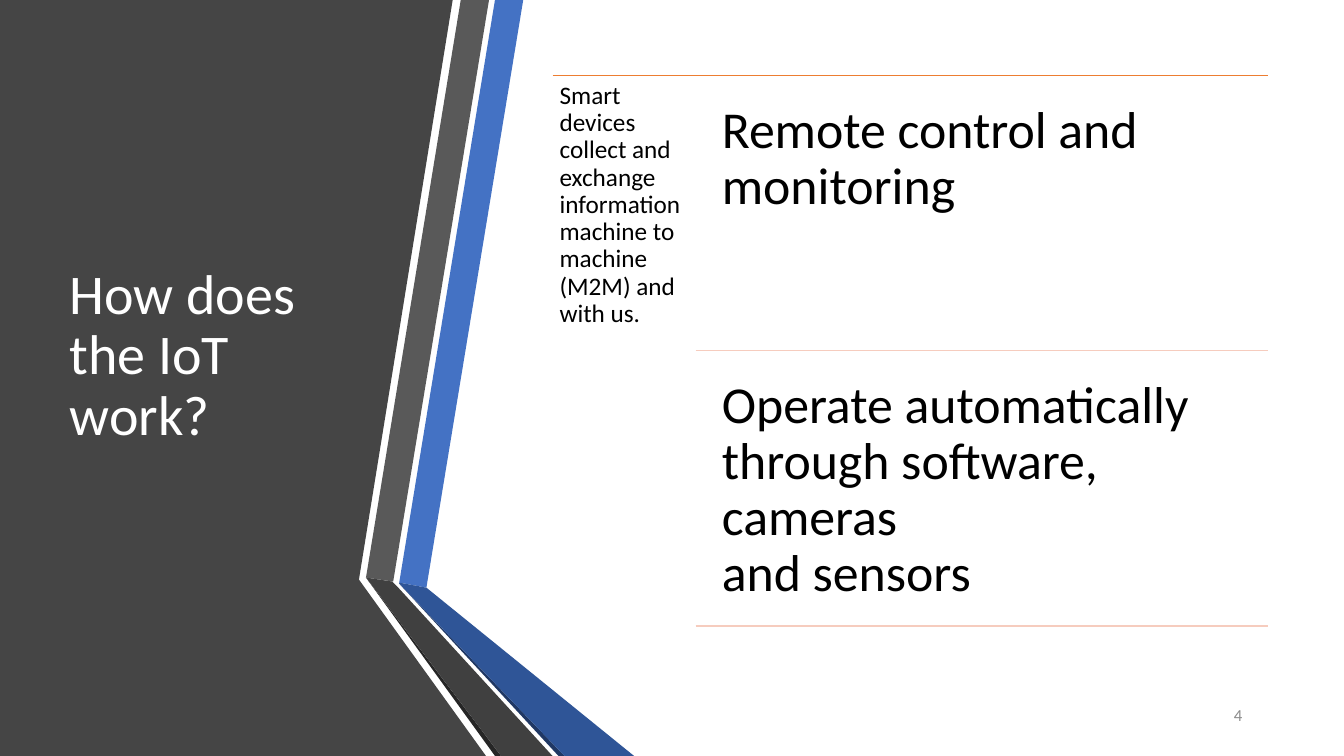
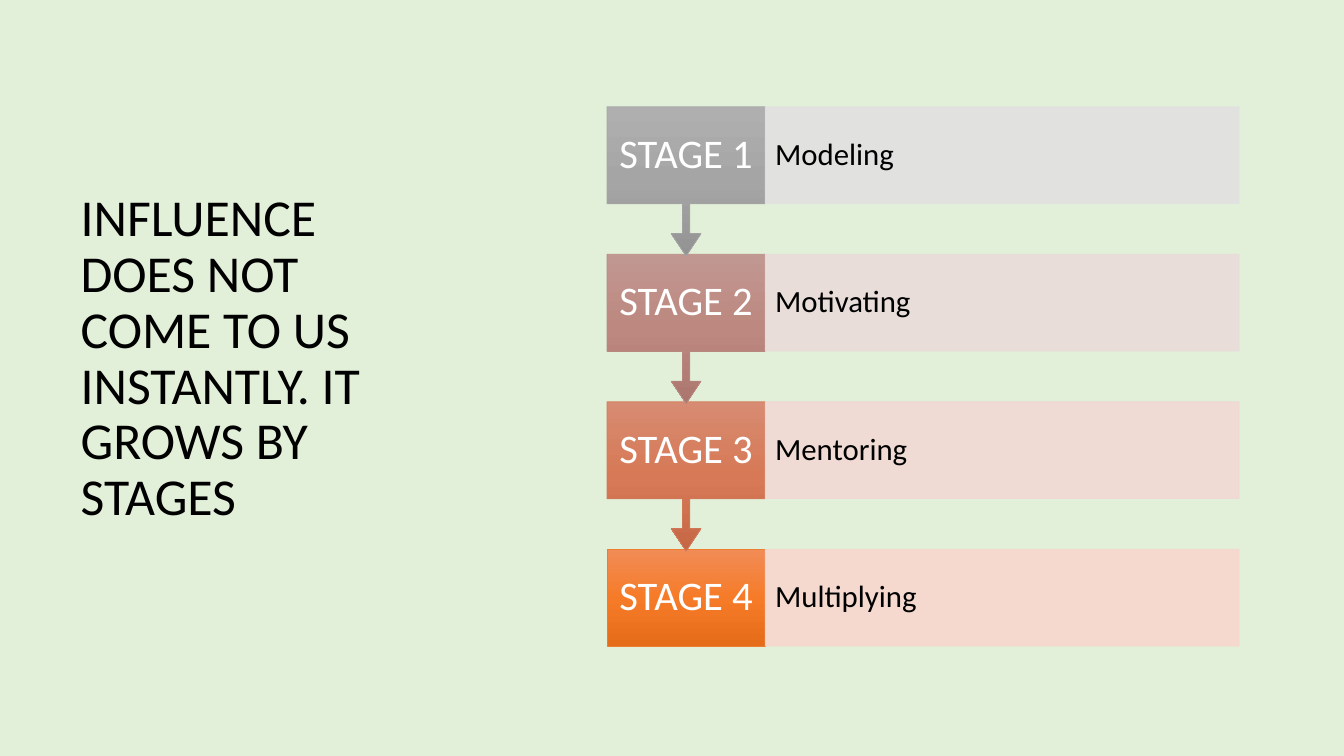
from lxml.etree import SubElement
from pptx import Presentation
from pptx.dml.color import RGBColor
from pptx.enum.shapes import MSO_CONNECTOR as Connector, MSO_SHAPE as Shape
from pptx.enum.text import MSO_ANCHOR as Anchor, MSO_AUTO_SIZE as AutoSize, PP_ALIGN as Align
from pptx.oxml.ns import qn
from pptx.util import Inches, Pt

WHITE = RGBColor(0xFF, 0xFF, 0xFF)
BLACK = RGBColor(0x00, 0x00, 0x00)
NUMBER_GRAY = RGBColor(0x8C, 0x8C, 0x8C)
PANEL_GRAY = RGBColor(0x45, 0x45, 0x45)
BAND_GRAY = RGBColor(0x59, 0x59, 0x59)
FOLD_GRAY = RGBColor(0x40, 0x40, 0x40)
EDGE_GRAY = RGBColor(0x26, 0x26, 0x26)
BAND_BLUE = RGBColor(0x44, 0x72, 0xC4)
FOLD_BLUE = RGBColor(0x2F, 0x55, 0x97)
EDGE_BLUE = RGBColor(0x20, 0x38, 0x64)
ORANGE = RGBColor(0xED, 0x7D, 0x31)
PALE_ORANGE = RGBColor(0xF6, 0xCC, 0xBE)
PALE_GREEN = RGBColor(0xE2, 0xF0, 0xD9)

RIBBON = [
    (PANEL_GRAY, [(0, 0), (4.49, 0), (3.56, 5.75), (4.82, 7.5), (0, 7.5)]),
    (BAND_BLUE, [(3.96, 5.78), (4.23, 5.83), (5.19, 0), (4.91, 0)]),
    (BAND_GRAY, [(4.85, 0), (4.57, 0), (3.63, 5.73), (3.9, 5.77)]),
    (EDGE_GRAY, [(3.63, 5.73), (4.91, 7.5), (4.97, 7.5)]),
    (EDGE_BLUE, [(3.96, 5.79), (5.54, 7.5), (5.6, 7.5)]),
    (FOLD_BLUE, [(3.96, 5.79), (5.6, 7.5), (6.29, 7.5), (4.23, 5.83), (3.96, 5.78)]),
    (FOLD_GRAY, [(5.48, 7.5), (3.95, 5.83), (3.89, 5.77), (3.63, 5.73), (4.97, 7.5)]),
]

STAGES = [
    ("STAGE 1", "Modeling", ("AFAFAF", "A5A5A5", "939393"), "A5A5A5", "E1E1E1"),
    ("STAGE 2", "Motivating", ("C19791", "BC8880", "AA766E"), "B98A82", "E9DBDA"),
    ("STAGE 3", "Mentoring", ("D78B72", "D77956", "C66846"), "D17B5C", "F1D8D4"),
    ("STAGE 4", "Multiplying", ("F18C57", "F67B28", "E56C19"), "ED7D31", "F8D7CE"),
]


class Deck:
    font = "Calibri"
    line_spacing = 0.9

    def __init__(self):
        self.prs = Presentation()
        self.prs.slide_width = Inches(13.33)
        self.prs.slide_height = Inches(7.5)
        self.slide = None

    def new_slide(self, background):
        self.slide = self.prs.slides.add_slide(self.prs.slide_layouts[5])
        fill = self.slide.background.fill
        fill.solid()
        fill.fore_color.rgb = background

    def fill_text(self, shape, lines, size, color=BLACK, align=Align.LEFT,
                  anchor=Anchor.TOP, insets=(0.1, 0.05), wrap=True):
        frame = shape.text_frame
        frame.auto_size = AutoSize.NONE
        frame.word_wrap = wrap
        frame.vertical_anchor = anchor
        frame.margin_left = frame.margin_right = Inches(insets[0])
        frame.margin_top = frame.margin_bottom = Inches(insets[1])
        paragraph = frame.paragraphs[0]
        paragraph.alignment = align
        paragraph.line_spacing = self.line_spacing
        for index, line in enumerate(lines):
            if index:
                paragraph.add_line_break()
            run = paragraph.add_run()
            run.text = line
            run.font.name = self.font
            run.font.size = Pt(size)
            run.font.color.rgb = color

    def title(self, box, text, size, color, anchor):
        title = self.slide.shapes.title
        title.left, title.top, title.width, title.height = map(Inches, box)
        title.element.getparent().append(title.element)
        self.fill_text(title, [text], size, color, anchor=anchor)

    def text(self, box, lines, size, **style):
        self.fill_text(self.slide.shapes.add_textbox(*map(Inches, box)), lines, size, **style)

    def polygon(self, points, color):
        corners = [(Inches(x), Inches(y)) for x, y in points]
        builder = self.slide.shapes.build_freeform(*corners[0])
        builder.add_line_segments(corners[1:], close=True)
        outline = builder.convert_to_shape()
        outline.shadow.inherit = False
        outline.fill.solid()
        outline.fill.fore_color.rgb = color
        outline.line.fill.background()

    def rule(self, left, right, y, color):
        rule = self.slide.shapes.add_connector(
            Connector.STRAIGHT, *map(Inches, (left, y, right, y)))
        rule.line.color.rgb = color
        rule.line.width = Pt(1)
        SubElement(rule.element.spPr, qn("a:effectLst"))

    def block(self, kind, box, line_color):
        block = self.slide.shapes.add_shape(kind, *map(Inches, box))
        block.shadow.inherit = False
        block.line.color.rgb = RGBColor.from_string(line_color)
        block.line.width = Pt(0.5)
        return block

    def stage_label(self, kind, box, label, shades, edge):
        stage = self.block(kind, box, edge)
        if kind == Shape.DOWN_ARROW_CALLOUT:
            for index, value in enumerate((0.05, 0.1, 0.15, 0.65)):
                stage.adjustments[index] = value
        stage.fill.gradient()
        stage.fill.gradient_angle = 270
        stops = next(stage.element.spPr.iter(qn("a:gsLst")))
        stops.clear()
        for position, shade in zip((0, 50000, 100000), shades):
            stop = SubElement(stops, qn("a:gs"), pos=str(position))
            SubElement(stop, qn("a:srgbClr"), val=shade)
        self.fill_text(stage, [label], 29, WHITE, Align.CENTER, Anchor.MIDDLE,
                       (0.11, 0), wrap=False)

    def stage_bar(self, box, text, tint):
        bar = self.block(Shape.RECTANGLE, box, tint)
        bar.fill.solid()
        bar.fill.fore_color.rgb = RGBColor.from_string(tint)
        for color in bar.element.spPr.iter(qn("a:srgbClr")):
            SubElement(color, qn("a:alpha"), val="90000")
        self.fill_text(bar, [text], 22, anchor=Anchor.MIDDLE, insets=(0.1, 0))


def build_iot(deck):
    deck.new_slide(WHITE)
    for color, points in RIBBON:
        deck.polygon(points, color)
    deck.title((0.59, 0.75, 3.04, 5.58), "How does the IoT work?", 40, WHITE, Anchor.MIDDLE)
    deck.text((11.23, 6.9, 1.19, 0.4), ["4"], 12, color=NUMBER_GRAY,
              align=Align.RIGHT, anchor=Anchor.MIDDLE)

    top, right, pitch = 0.75, 12.58, 2.73
    deck.rule(5.48, right, top, ORANGE)
    deck.text((5.48, top, 1.42, 5.58),
              ["Smart devices collect and exchange information machine to machine (M2M) and with us."],
              18, insets=(0.07, 0.07))
    functions = [
        ["Remote control and monitoring"],
        ["Operate automatically through software, cameras ", "and sensors"],
    ]
    for row, lines in enumerate(functions):
        deck.text((7.01, top + 0.13 + row * pitch, 5.57, 2.6), lines, 37, insets=(0.15, 0.15))
        deck.rule(6.9, right, top + (row + 1) * pitch, PALE_ORANGE)


def build_stages(deck):
    deck.new_slide(PALE_GREEN)
    deck.title((0.7, 1.85, 3.58, 4.35),
               "INFLUENCE DOES NOT COME TO US INSTANTLY. IT GROWS BY STAGES",
               37, BLACK, Anchor.TOP)
    left, top, label_width, bar_height = 6.02, 1.06, 1.57, 0.96
    last = len(STAGES) - 1
    pitch = (5.45 - top) / last
    for row, (label, text, shades, edge, tint) in reversed(list(enumerate(STAGES))):
        y = top + row * pitch
        kind, height = ((Shape.RECTANGLE, bar_height) if row == last
                        else (Shape.DOWN_ARROW_CALLOUT, 1.48))
        deck.stage_label(kind, (left, y, label_width, height), label, shades, edge)
        deck.stage_bar((left + label_width, y, 4.7, bar_height), text, tint)


def main():
    deck = Deck()
    build_iot(deck)
    build_stages(deck)
    deck.prs.save("out.pptx")


if __name__ == "__main__":
    main()
